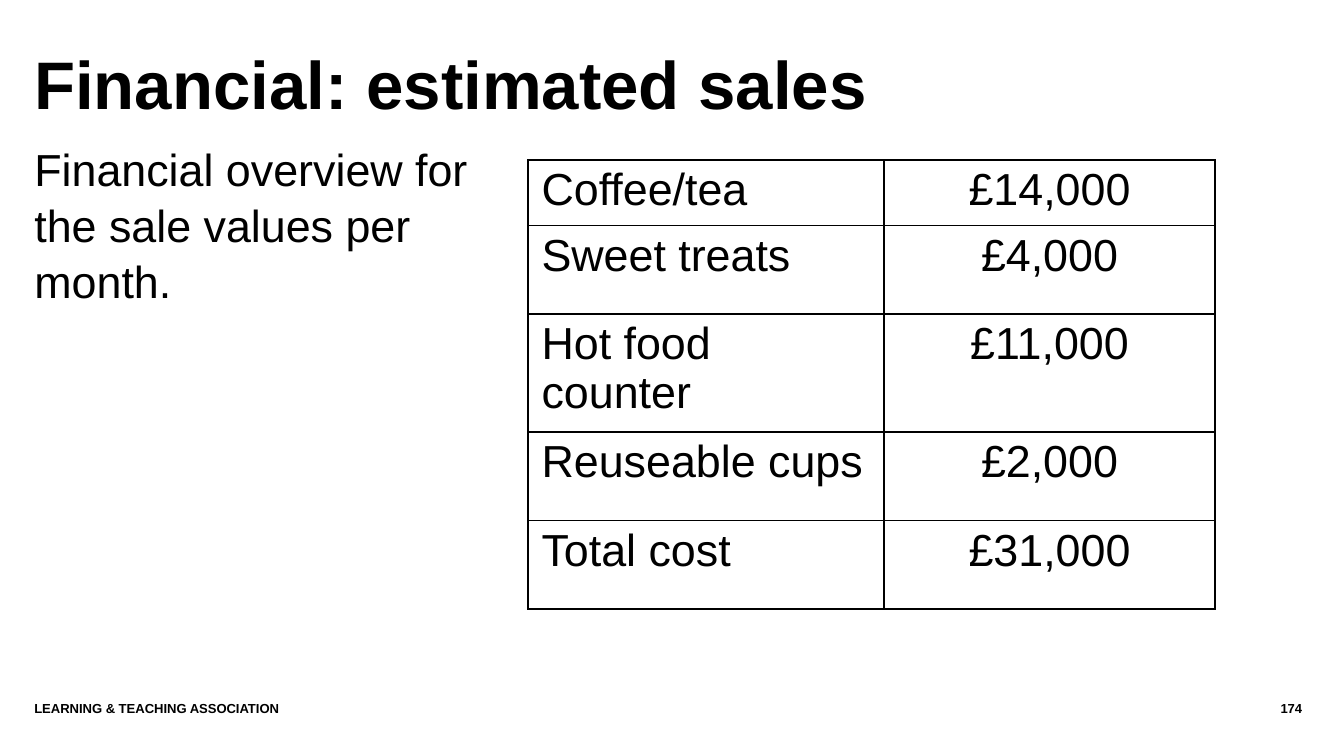
from dataclasses import dataclass

from lxml import etree
from pptx import Presentation
from pptx.dml.color import RGBColor
from pptx.enum.text import MSO_ANCHOR, PP_ALIGN
from pptx.oxml.ns import qn
from pptx.util import Cm, Pt

LEFT, CENTER, RIGHT = PP_ALIGN.LEFT, PP_ALIGN.CENTER, PP_ALIGN.RIGHT
TOP, MIDDLE = MSO_ANCHOR.TOP, MSO_ANCHOR.MIDDLE
TITLE_ONLY = 5


@dataclass(frozen=True)
class Theme:
    font: str = "Arial"
    ink: str = "000000"
    paper: str = "FFFFFF"
    title: int = 36
    body: int = 24
    footer: int = 7
    border: int = 1


THEME = Theme()

SALES = [
    ("Coffee/tea", "£14,000"),
    ("Sweet treats", "£4,000"),
    ("Hot food counter", "£11,000"),
    ("Reuseable cups", "£2,000"),
    ("Total cost", "£31,000"),
]


def write(tf, text, size=THEME.body, bold=False, align=LEFT, spacing=1.0):
    """Fill a text frame with one formatted paragraph."""
    tf.word_wrap = True
    p = tf.paragraphs[0]
    p.alignment, p.line_spacing = align, spacing
    r = p.add_run()
    r.text = text
    r.font.name, r.font.size, r.font.bold = THEME.font, Pt(size), bold
    r.font.color.rgb = RGBColor.from_string(THEME.ink)


def set_frame(tf, anchor=TOP):
    """Remove the insets and anchor the text."""
    tf.margin_left = tf.margin_right = tf.margin_top = tf.margin_bottom = 0
    tf.vertical_anchor = anchor


def add_title(s, box, text):
    sp = s.shapes.title
    sp.left, sp.top, sp.width, sp.height = box
    set_frame(sp.text_frame, MIDDLE)
    write(sp.text_frame, text, size=THEME.title, bold=True, spacing=0.9)


def add_text(s, box, text, **fmt):
    sp = s.shapes.add_textbox(*box)
    set_frame(sp.text_frame)
    write(sp.text_frame, text, **fmt)


def add_borders(cell):
    tc_pr = cell._tc.get_or_add_tcPr()
    for i, side in enumerate(("lnL", "lnR", "lnT", "lnB")):
        ln = etree.Element(qn(f"a:{side}"), w=str(Pt(THEME.border)))
        fill = etree.SubElement(ln, qn("a:solidFill"))
        etree.SubElement(fill, qn("a:srgbClr"), val=THEME.ink)
        tc_pr.insert(i, ln)  # borders come before the cell fill


def add_sales_table(s, box, rows):
    left, top, width, height = box
    table = s.shapes.add_table(len(rows), 2, *box).table
    table.first_row = table.horz_banding = False

    # The first row fits one line, the third two; the rest are equal
    one_line, two_lines = Cm(1.21), Cm(2.15)
    equal = (height - one_line - two_lines) // (len(rows) - 2)
    fitted = {0: one_line, 2: two_lines}
    label_width = Cm(6.73)
    table.columns[0].width = label_width
    table.columns[1].width = width - label_width

    for i, values in enumerate(rows):
        table.rows[i].height = fitted.get(i, equal)
        for j, (text, align) in enumerate(zip(values, (LEFT, CENTER))):
            cell = table.cell(i, j)
            cell.fill.solid()
            cell.fill.fore_color.rgb = RGBColor.from_string(THEME.paper)
            add_borders(cell)
            write(cell.text_frame, text, align=align, spacing=0.97)


def add_footer(s, box, owner, number):
    left, top, width, height = box
    number_width = Cm(2.51)
    fmt = dict(size=THEME.footer, bold=True)
    add_text(s, (left, top, width - number_width, height), owner, **fmt)
    add_text(s, (left + width - number_width, top, number_width, height),
             number, align=RIGHT, **fmt)


def main():
    prs = Presentation()
    prs.slide_width, prs.slide_height = Cm(25.4), Cm(14.28)
    s = prs.slides.add_slide(prs.slide_layouts[TITLE_ONLY])
    s.background.fill.solid()
    s.background.fill.fore_color.rgb = RGBColor.from_string(THEME.paper)

    margin = Cm(0.65)
    # Heading and introduction
    add_title(s, (margin, Cm(0.69), Cm(23.44), Cm(1.93)),
              "Financial: estimated sales")
    add_text(s, (margin, Cm(2.64), Cm(8.86), Cm(9.32)),
             "Financial overview for the sale values per month.", spacing=1.04)
    # Monthly sales
    add_sales_table(s, (Cm(9.98), Cm(3.02), Cm(12.98), Cm(8.38)), SALES)
    # Footer
    add_footer(s, (margin, Cm(13.23), Cm(23.96), Cm(0.76)),
               "LEARNING & TEACHING ASSOCIATION", "174")
    prs.save("out.pptx")


if __name__ == "__main__":
    main()
